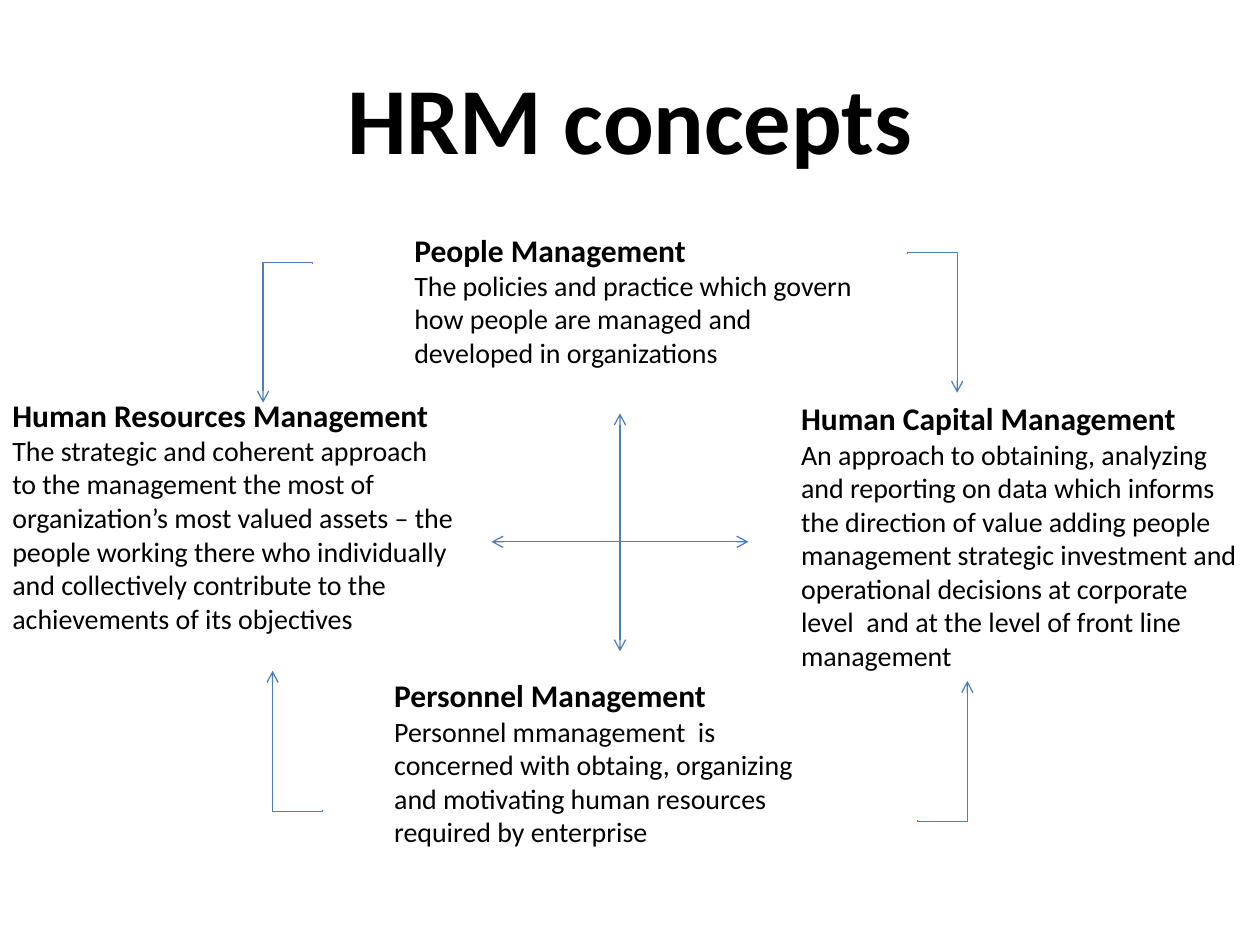
from dataclasses import dataclass

from lxml.etree import SubElement
from pptx import Presentation
from pptx.dml.color import RGBColor
from pptx.enum.shapes import MSO_CONNECTOR
from pptx.enum.text import MSO_ANCHOR, MSO_AUTO_SIZE, PP_ALIGN
from pptx.oxml.ns import qn
from pptx.shapes.connector import Connector
from pptx.slide import Slide
from pptx.text.text import _Paragraph as Para
from pptx.util import Pt

BLACK = RGBColor(0x00, 0x00, 0x00)
BLUE = RGBColor(0x4B, 0x7E, 0xBC)
FONT = "Calibri"
WIDTH = 266.4
LONG, SHORT = 79.4, 28.4
BEND = -1100


@dataclass
class Concept:
    left: float
    top: float
    height: float
    head: str
    body: str


@dataclass
class Axis:
    x1: float
    y1: float
    x2: float
    y2: float


@dataclass
class Elbow:
    mid_x: float
    mid_y: float
    turn: int
    flip: bool


CONCEPTS = [
    Concept(229.7, 128.2, 87, "People Management",
            "The policies and practice which govern how people are managed "
            "and developed in organizations"),
    Concept(450.7, 224.6, 165, "Human Capital Management",
            "An approach to obtaining, analyzing and reporting on data which "
            "informs the direction of value adding people management "
            "strategic investment and operational decisions at corporate "
            "level  and at the level of front line management"),
    Concept(0, 222.5, 188.6, "Human Resources Management",
            "The strategic and coherent approach to the management the most "
            "of organization’s most valued assets – the people working there "
            "who individually and collectively contribute to the "
            "achievements of its objectives"),
    Concept(218.2, 383, 106.6, "Personnel Management",
            "Personnel mmanagement  is concerned with obtaing, organizing "
            "and motivating human resources required by enterprise"),
]

AXES = [
    Axis(280.8, 309.6, 427.7, 309.6),
    Axis(354.3, 236.2, 354.3, 372.2),
]

ELBOWS = [
    Elbow(532.8, 184.7, 270, True),
    Elbow(164.5, 190.4, 90, False),
    Elbow(170, 423, 90, True),
    Elbow(538.6, 428.8, 270, False),
]


def style(para: Para, text: str, size: float, bold: bool) -> None:
    para.text = text
    font = para.font
    font.name = FONT
    font.size = Pt(size)
    font.bold = bold
    font.color.rgb = BLACK


def add_title(slide: Slide, text: str) -> None:
    box = slide.shapes.add_textbox(Pt(36), Pt(21.6), Pt(648), Pt(90))
    frame = box.text_frame
    frame.word_wrap = True
    frame.vertical_anchor = MSO_ANCHOR.MIDDLE
    para = frame.paragraphs[0]
    para.alignment = PP_ALIGN.CENTER
    style(para, text, 54, True)


def add_concept(slide: Slide, item: Concept) -> None:
    box = slide.shapes.add_textbox(
        Pt(item.left), Pt(item.top), Pt(WIDTH), Pt(item.height))
    frame = box.text_frame
    frame.word_wrap = True
    frame.auto_size = MSO_AUTO_SIZE.SHAPE_TO_FIT_TEXT
    style(frame.paragraphs[0], item.head, 18, True)
    style(frame.add_paragraph(), item.body, 16, False)


def finish(link: Connector, *ends: str) -> None:
    link.line.color.rgb = BLUE
    link.line.width = Pt(0.75)
    for end in ends:
        SubElement(link.line._get_or_add_ln(), qn(end), type="arrow")
    SubElement(link._element.spPr, qn("a:effectLst"))


def add_axis(slide: Slide, axis: Axis) -> None:
    link = slide.shapes.add_connector(
        MSO_CONNECTOR.STRAIGHT,
        Pt(axis.x1), Pt(axis.y1), Pt(axis.x2), Pt(axis.y2))
    finish(link, "a:headEnd", "a:tailEnd")


def add_elbow(slide: Slide, elbow: Elbow) -> None:
    left, top = elbow.mid_x - LONG / 2, elbow.mid_y - SHORT / 2
    link = slide.shapes.add_connector(
        MSO_CONNECTOR.ELBOW,
        Pt(left), Pt(top), Pt(left + LONG), Pt(top + SHORT))
    props = link._element.spPr
    frame = props.find(qn("a:xfrm"))
    frame.set("rot", str(elbow.turn * 60000))
    if elbow.flip:
        frame.set("flipH", "1")
    guides = props.find(qn("a:prstGeom")).find(qn("a:avLst"))
    SubElement(guides, qn("a:gd"), name="adj1", fmla=f"val {BEND}")
    finish(link, "a:tailEnd")


def main() -> None:
    deck = Presentation()
    deck.slide_width, deck.slide_height = Pt(720), Pt(540)
    slide = deck.slides.add_slide(deck.slide_layouts[6])
    add_title(slide, "HRM concepts")
    for item in CONCEPTS:
        add_concept(slide, item)
    for axis in AXES:
        add_axis(slide, axis)
    for elbow in ELBOWS:
        add_elbow(slide, elbow)
    deck.save("out.pptx")


if __name__ == "__main__":
    main()
